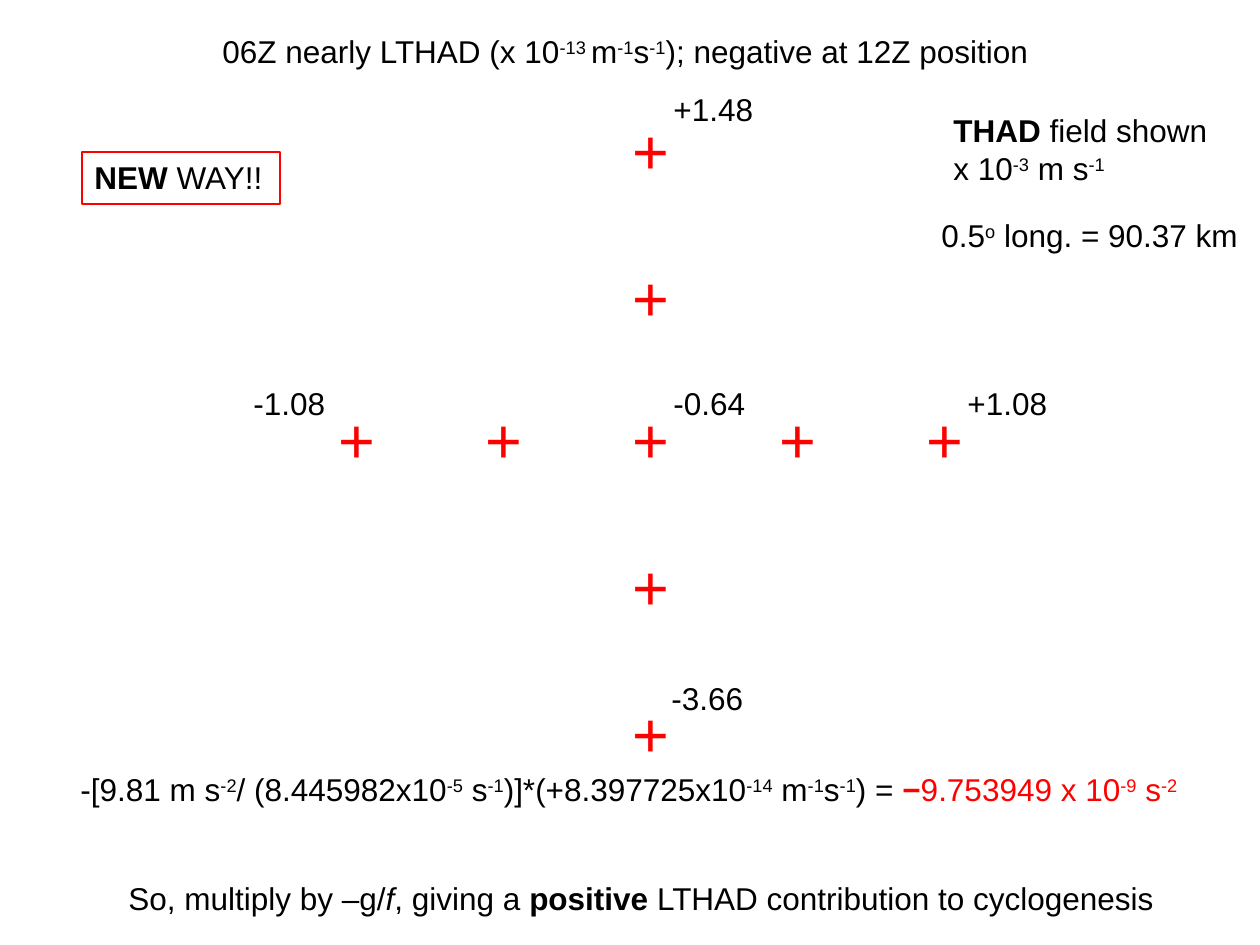
"""Build the LTHAD slide: a cross of grid points, their values and the worked result."""
from dataclasses import dataclass

import lxml.etree
import pptx
import pptx.dml.color
import pptx.enum.dml
import pptx.enum.shapes
import pptx.enum.text
import pptx.oxml.ns
import pptx.util

PIXELS_PER_INCH = 126


@dataclass(frozen=True)
class Theme:
    font: str = "Arial"
    ink: str = "000000"
    accent: str = "FF0000"
    paper: str = "FFFFFF"
    body_size: int = 18
    marker_size: int = 36
    outline_width: float = 0.75
    value_opacity: int = 85


THEME = Theme()


@dataclass(frozen=True)
class Run:
    text: str
    bold: bool = False
    italic: bool = False
    raised: bool = False
    color: str = THEME.ink
    size: int = THEME.body_size


@dataclass(frozen=True)
class Panel:
    left: int
    top: int
    width: int
    height: int
    paragraphs: tuple[tuple[Run, ...], ...]
    outlined: bool = False
    opacity: int = 100


def px(length: int) -> int:
    return round(length * pptx.util.Inches(1) / PIXELS_PER_INCH)


def rgb(color: str) -> pptx.dml.color.RGBColor:
    return pptx.dml.color.RGBColor.from_string(color)


def sup(text: str, color: str = THEME.ink) -> Run:
    return Run(text, raised=True, color=color)


def value_panel(left: int, top: int, width: int, text: str) -> Panel:
    return Panel(left, top, width, 50, ((Run(text),),), opacity=THEME.value_opacity)


def write_text(shape, paragraphs: tuple[tuple[Run, ...], ...], wrap: bool) -> None:
    frame = shape.text_frame
    frame.word_wrap = wrap
    frame.auto_size = pptx.enum.text.MSO_AUTO_SIZE.SHAPE_TO_FIT_TEXT
    frame.vertical_anchor = pptx.enum.text.MSO_ANCHOR.TOP
    for index, runs in enumerate(paragraphs):
        paragraph = frame.add_paragraph() if index else frame.paragraphs[0]
        paragraph.alignment = pptx.enum.text.PP_ALIGN.LEFT
        for item in runs:
            run = paragraph.add_run()
            run.text = item.text
            run.font.name = THEME.font
            run.font.size = pptx.util.Pt(item.size)
            run.font.bold = item.bold
            run.font.italic = item.italic
            run.font.color.rgb = rgb(item.color)
            if item.raised:
                run._r.get_or_add_rPr().set("baseline", "30000")


def draw_panel(slide, panel: Panel) -> None:
    shape = slide.shapes.add_shape(
        pptx.enum.shapes.MSO_SHAPE.RECTANGLE,
        px(panel.left), px(panel.top), px(panel.width), px(panel.height))
    shape.shadow.inherit = False
    shape.fill.solid()
    shape.fill.fore_color.rgb = rgb(THEME.paper)
    if panel.opacity < 100:
        color = shape._element.spPr.find(".//" + pptx.oxml.ns.qn("a:srgbClr"))
        alpha = lxml.etree.SubElement(color, pptx.oxml.ns.qn("a:alpha"))
        alpha.set("val", str(panel.opacity * 1000))
    if panel.outlined:
        shape.line.color.rgb = rgb(THEME.accent)
        shape.line.width = pptx.util.Pt(THEME.outline_width)
    else:
        shape.line.fill.background()
    write_text(shape, panel.paragraphs, wrap=False)


def draw_marker(slide, left: int, top: int) -> None:
    shape = slide.shapes.add_textbox(px(left), px(top), px(53), px(89))
    plus = Run("+", color=THEME.accent, size=THEME.marker_size)
    write_text(shape, ((plus,),), wrap=True)


PANELS = (
    Panel(116, 873, 1052, 50, ((
        Run("So, multiply by –g/"), Run("f", italic=True), Run(", giving a "),
        Run("positive", bold=True), Run(" LTHAD contribution to cyclogenesis")),)),
    Panel(82, 152, 198, 52, ((Run("NEW", bold=True), Run(" WAY!!")),), outlined=True),
    Panel(941, 105, 280, 88, (
        (Run("THAD", bold=True), Run(" field shown")),
        (Run("x 10"), sup("-3"), Run(" m s"), sup("-1")))),
    Panel(929, 210, 326, 50, ((Run("0.5"), sup("o"), Run(" long. = 90.37 km")),)),
    value_panel(955, 378, 106, "+1.08"),
    value_panel(241, 378, 98, "-1.08"),
    value_panel(661, 378, 98, "-0.64"),
    value_panel(661, 84, 106, "+1.48"),
    value_panel(659, 673, 98, "-3.66"),
    Panel(210, 26, 848, 50, ((
        Run("06Z nearly LTHAD (x 10"), sup("-13 "), Run("m"), sup("-1"), Run("s"),
        sup("-1"), Run("); negative at 12Z position")),)),
    Panel(68, 764, 1154, 50, ((
        Run("-[9.81 m s"), sup("-2"), Run("/ (8.445982x10"), sup("-5"), Run(" s"),
        sup("-1"), Run(")]*(+8.397725x10"), sup("-14"), Run(" m"), sup("-1"),
        Run("s"), sup("-1"), Run(") = "), Run("−", bold=True, color=THEME.accent),
        Run("9.753949 x 10", color=THEME.accent), sup("-9", THEME.accent),
        Run(" s", color=THEME.accent), sup("-2", THEME.accent)),)),
)

MARKER_STEP = 147
CENTER_LEFT, CENTER_TOP = 620, 394
ROW_MARKERS = tuple((CENTER_LEFT + MARKER_STEP * step, CENTER_TOP) for step in range(-2, 3))
COLUMN_MARKERS = tuple(
    (CENTER_LEFT, first + MARKER_STEP * step) for first in (105, 541) for step in range(2))


def main() -> None:
    presentation = pptx.Presentation()
    presentation.slide_width = px(1260)
    presentation.slide_height = px(945)
    slide = presentation.slides.add_slide(presentation.slide_layouts[6])
    slide.background.fill.solid()
    slide.background.fill.fore_color.rgb = rgb(THEME.paper)
    for panel in PANELS:
        draw_panel(slide, panel)
    for left, top in ROW_MARKERS + COLUMN_MARKERS:
        draw_marker(slide, left, top)
    presentation.save("out.pptx")


if __name__ == "__main__":
    main()
